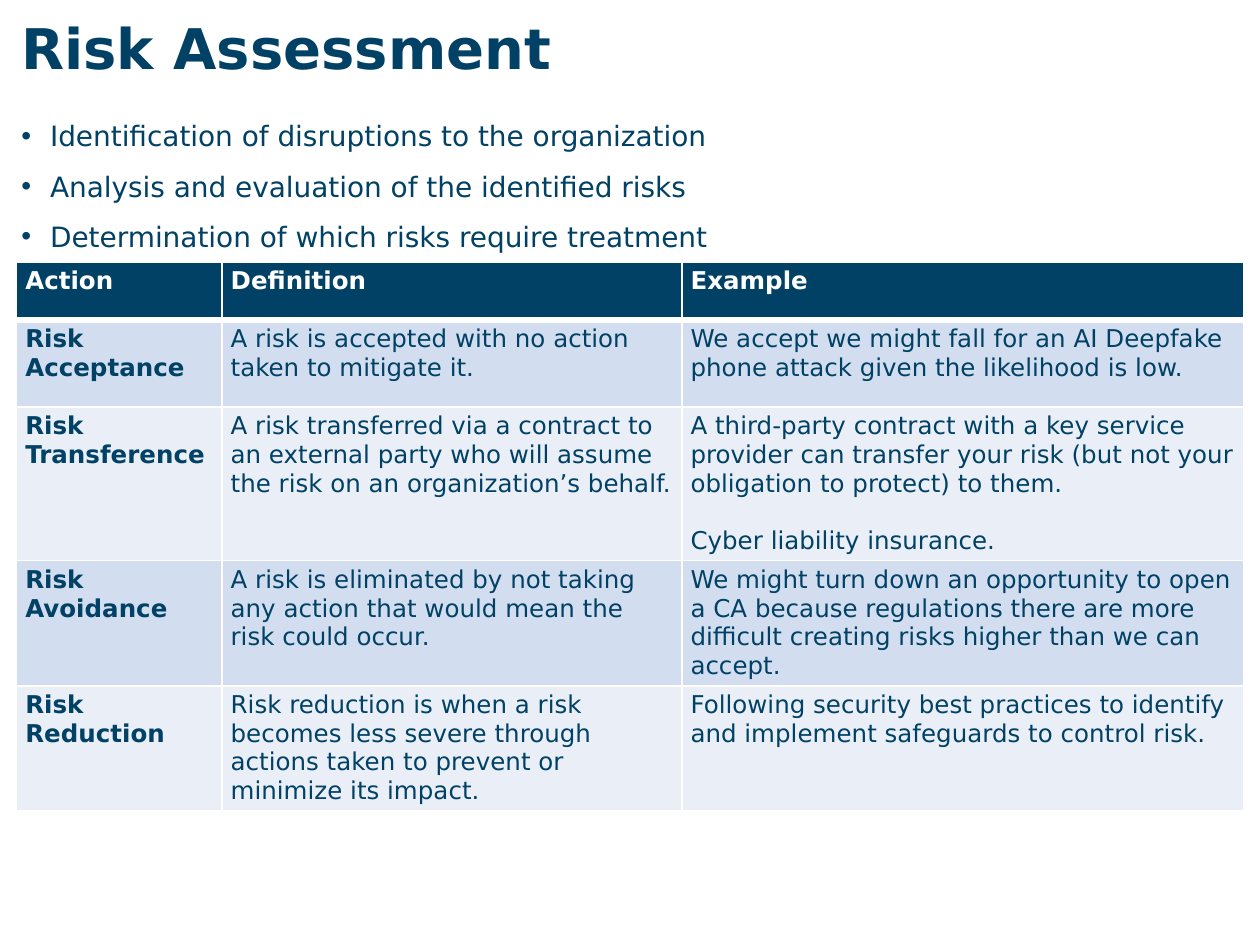
from lxml.etree import SubElement
from pptx import Presentation
from pptx.dml.color import RGBColor
from pptx.enum.text import MSO_AUTO_SIZE
from pptx.oxml.ns import qn
from pptx.util import Cm, Pt

HUES = {"navy": "004165", "white": "FFFFFF", "blue": "D2DEEF", "pale": "EAEFF7"}
FONT = "DejaVu Sans"
PAD = {"margin_left": Cm(0.18), "margin_right": Cm(0.18),
       "margin_top": Cm(0.1), "margin_bottom": Cm(0.1)}


def add_run(para, text, size, hue="navy", bold=False):
    run = para.add_run()
    run.text = text
    run.font.name = FONT
    run.font.size = Pt(size)
    run.font.bold = bold
    run.font.color.rgb = RGBColor.from_string(HUES[hue])


def add_box(left, top, width, height):
    frame = slide.shapes.add_textbox(Cm(left), Cm(top), Cm(width), Cm(height)).text_frame
    frame.word_wrap = True
    frame.auto_size = MSO_AUTO_SIZE.SHAPE_TO_FIT_TEXT
    for side, gap in PAD.items():
        setattr(frame, side, gap)
    return frame


deck = Presentation()
deck.slide_width, deck.slide_height = Cm(25.4), Cm(19.05)
slide = deck.slides.add_slide(deck.slide_layouts[6])

# Table
rows = [
    ["Action", "Definition", "Example"],
    ["Risk Acceptance",
     "A risk is accepted with no action taken to mitigate it.",
     "We accept we might fall for an AI Deepfake phone attack given the likelihood is low."],
    ["Risk Transference",
     "A risk transferred via a contract to an external party who will assume "
     "the risk on an organization’s behalf.",
     "A third-party contract with a key service provider can transfer your risk "
     "(but not your obligation to protect) to them.\nCyber liability insurance."],
    ["Risk Avoidance",
     "A risk is eliminated by not taking any action that would mean the risk could occur.",
     "We might turn down an opportunity to open a CA because regulations there are "
     "more difficult creating risks higher than we can accept."],
    ["Risk Reduction",
     "Risk reduction is when a risk becomes less severe through actions taken "
     "to prevent or minimize its impact.",
     "Following security best practices to identify and implement safeguards "
     "to control risk."],
]
widths = [4.14, 9.27, 11.33]
heights = [1.17, 1.75, 2.72, 1.78, 1.78]
grid = slide.shapes.add_table(len(rows), len(widths), Cm(0.33), Cm(5.28),
                              Cm(sum(widths)), Cm(11.4)).table
for col, width in zip(grid.columns, widths):
    col.width = Cm(width)
for row, height in zip(grid.rows, heights):
    row.height = Cm(height)

for r, row in enumerate(rows):
    fill = "navy" if r == 0 else ("pale", "blue")[r % 2]
    for c, text in enumerate(row):
        cell = grid.cell(r, c)
        for side, gap in PAD.items():
            setattr(cell, side, gap)
        for side in "LRTB":
            thick = (r, side) in [(0, "B"), (1, "T")]
            line = SubElement(cell._tc.get_or_add_tcPr(), qn(f"a:ln{side}"),
                              w=str(Pt(3.8 if thick else 1.25)))
            paint = SubElement(line, qn("a:solidFill"))
            SubElement(paint, qn("a:srgbClr"), val=HUES["white"])
        cell.fill.solid()
        cell.fill.fore_color.rgb = RGBColor.from_string(HUES[fill])
        for n, part in enumerate(text.split("\n")):
            para = cell.text_frame.add_paragraph() if n else cell.text_frame.paragraphs[0]
            if n:
                para.space_before = Pt(16.4)
            add_run(para, part, 14, "white" if r == 0 else "navy", r == 0 or c == 0)

# Bullets
points = ["Identification of disruptions to the organization",
          "Analysis and evaluation of the identified risks",
          "Determination of which risks require treatment"]
frame = add_box(0.25, 1.96, 20.52, 3.12)
for n, text in enumerate(points):
    para = frame.add_paragraph() if n else frame.paragraphs[0]
    para.line_spacing = 1.5
    props = para._p.get_or_add_pPr()
    props.set("marL", str(Cm(0.58)))
    props.set("indent", str(-Cm(0.58)))
    SubElement(props, qn("a:buFont"), typeface="Arial")
    SubElement(props, qn("a:buChar"), char="•")
    add_run(para, text, 16)

# Title
add_run(add_box(0.25, 0.18, 13.56, 1.55).paragraphs[0], "Risk Assessment", 32, bold=True)

deck.save("out.pptx")
